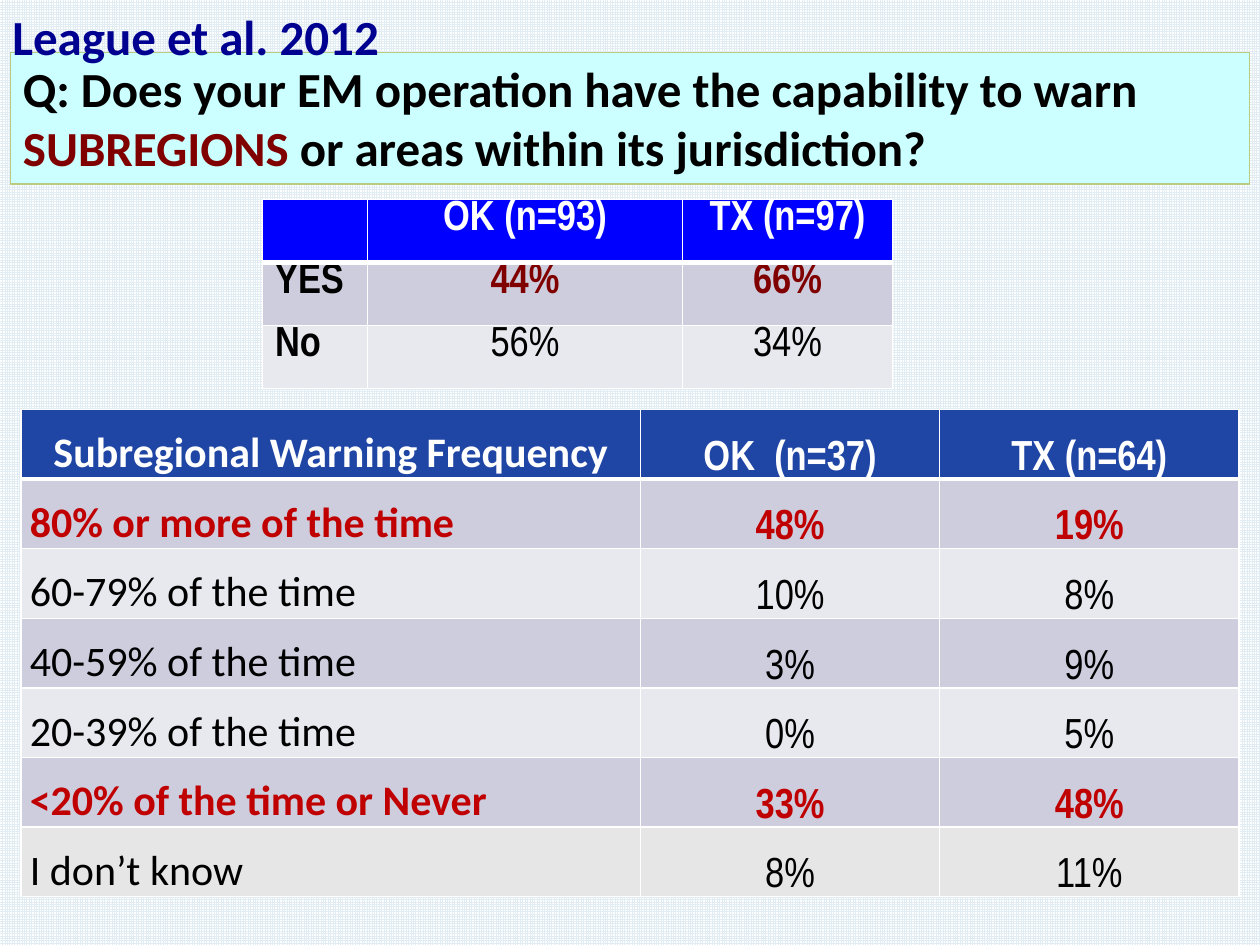
from lxml import etree
from pptx import Presentation
from pptx import util as u
from pptx.dml.color import RGBColor
from pptx.enum import dml, shapes, text
from pptx.oxml.ns import qn

BLACK = RGBColor(0x00, 0x00, 0x00)
WHITE = RGBColor(0xFF, 0xFF, 0xFF)
NAVY = RGBColor(0x00, 0x00, 0x90)
MAROON = RGBColor(0x80, 0x00, 0x00)
RED = RGBColor(0xC0, 0x00, 0x00)
BLUE = RGBColor(0x00, 0x00, 0xFF)
ROYAL = RGBColor(0x20, 0x46, 0xA5)
CYAN = RGBColor(0xCC, 0xFF, 0xFF)
GREEN = RGBColor(0xBA, 0xCC, 0x82)
DARK_BAND = RGBColor(0xCD, 0xCD, 0xDE)
LIGHT_BAND = RGBColor(0xE8, 0xE8, 0xEF)
GRAY = RGBColor(0xE6, 0xE6, 0xE6)
PALE_GRID = RGBColor(0xE2, 0xEC, 0xF3)
BODY, NARROW = "Calibri", "Arial Narrow"

prs = Presentation()
prs.slide_width, prs.slide_height = u.Inches(10), u.Inches(7.5)
UNIT = prs.slide_width / 120  # the slide is a grid of 120 columns by 90 rows


def add_run(p, words, size, font, color, bold):
    r = p.add_run()
    r.text = words
    r.font.size, r.font.name, r.font.bold = u.Pt(size), font, bold
    r.font.color.rgb = color


def style_cell(cell, fill, top, bottom):
    """Set white borders (widths in points), then the fill."""
    tcPr = cell._tc.get_or_add_tcPr()
    for side, width in (("L", 1), ("R", 1), ("T", top), ("B", bottom)):
        ln = etree.SubElement(tcPr, qn(f"a:ln{side}"), w=str(u.Pt(width)))
        solid = etree.SubElement(ln, qn("a:solidFill"))
        etree.SubElement(solid, qn("a:srgbClr"), val=str(WHITE))
    cell.fill.solid()
    cell.fill.fore_color.rgb = fill


s = prs.slides.add_slide(prs.slide_layouts[6])
bg = s.background.fill
bg.patterned()
bg.pattern = dml.MSO_PATTERN.SMALL_GRID
bg.fore_color.rgb, bg.back_color.rgb = PALE_GRID, WHITE

# Question
sp = s.shapes.add_shape(shapes.MSO_SHAPE.RECTANGLE,
                        *(int(n * UNIT) for n in (1, 5, 118, 12.5)))
sp.shadow.inherit = False
sp.fill.solid()
sp.fill.fore_color.rgb = CYAN
sp.line.color.rgb, sp.line.width = GREEN, u.Pt(1)
tf = sp.text_frame
tf.word_wrap = True
tf.vertical_anchor = text.MSO_ANCHOR.TOP
p = tf.paragraphs[0]
p.alignment = text.PP_ALIGN.LEFT
for words, color in (
    ("Q: Does your EM operation have the capability to warn ", BLACK),
    ("SUBREGIONS", MAROON),
    (" or areas within its jurisdiction?", BLACK),
):
    add_run(p, words, 28, BODY, color, True)

# Citation
sp = s.shapes.add_textbox(*(int(n * UNIT) for n in (0, 0, 65, 6.87)))
sp.text_frame.word_wrap = True
add_run(sp.text_frame.paragraphs[0], "League et al. 2012", 28, BODY, NAVY, True)

# Tables: place, column widths and row height are in grid units
capability = dict(
    left=25, top=19, widths=(10, 30, 20), height=6,
    head=BLUE, last=LIGHT_BAND, label_font=NARROW, bold_labels=True,
    accent=MAROON, accent_labels=False, accent_rows=(1,),
    anchor=text.MSO_ANCHOR.TOP, side=0.1,
    rows=(("", "OK (n=93)", "TX (n=97)"),
          ("YES", "44%", "66%"),
          ("No", "56%", "34%")))
frequency = dict(
    left=2, top=39, widths=(59, 28.5, 28.5), height=6.63,
    head=ROYAL, last=GRAY, label_font=BODY, bold_labels=False,
    accent=RED, accent_labels=True, accent_rows=(1, 5),
    anchor=text.MSO_ANCHOR.BOTTOM, side=0.07,
    rows=(("Subregional Warning Frequency", "OK  (n=37)", "TX (n=64)"),
          ("80% or more of the time", "48%", "19%"),
          ("60-79% of the time", "10%", "8%"),
          ("40-59% of the time", "3%", "9%"),
          ("20-39% of the time", "0%", "5%"),
          ("<20% of the time or Never", "33%", "48%"),
          ("I don’t know", "8%", "11%")))

for t in (capability, frequency):
    rows, widths = t["rows"], t["widths"]
    place = (t["left"], t["top"], sum(widths), t["height"] * len(rows))
    table = s.shapes.add_table(len(rows), len(widths),
                               *(int(n * UNIT) for n in place)).table
    for column, width in zip(table.columns, widths):
        column.width = int(width * UNIT)
    for i, row in enumerate(rows):
        table.rows[i].height = int(t["height"] * UNIT)
        if i == 0:
            fill = t["head"]
        elif i == len(rows) - 1:
            fill = t["last"]
        else:
            fill = DARK_BAND if i % 2 else LIGHT_BAND
        for j, words in enumerate(row):
            cell = table.cell(i, j)
            style_cell(cell, fill, 3 if i == 1 else 1, 3 if i == 0 else 1)
            cell.vertical_anchor = t["anchor"]
            cell.margin_left = cell.margin_right = u.Inches(t["side"])
            cell.margin_top = cell.margin_bottom = 0
            accented = i in t["accent_rows"]
            color = WHITE if i == 0 else BLACK
            if accented and (j > 0 or t["accent_labels"]):
                color = t["accent"]
            bold = i == 0 or accented or (j == 0 and t["bold_labels"])
            p = cell.text_frame.paragraphs[0]
            centred = i == 0 or j > 0
            p.alignment = text.PP_ALIGN.CENTER if centred else text.PP_ALIGN.LEFT
            if words:
                add_run(p, words, 24, NARROW if j else t["label_font"], color, bold)

prs.save("out.pptx")
